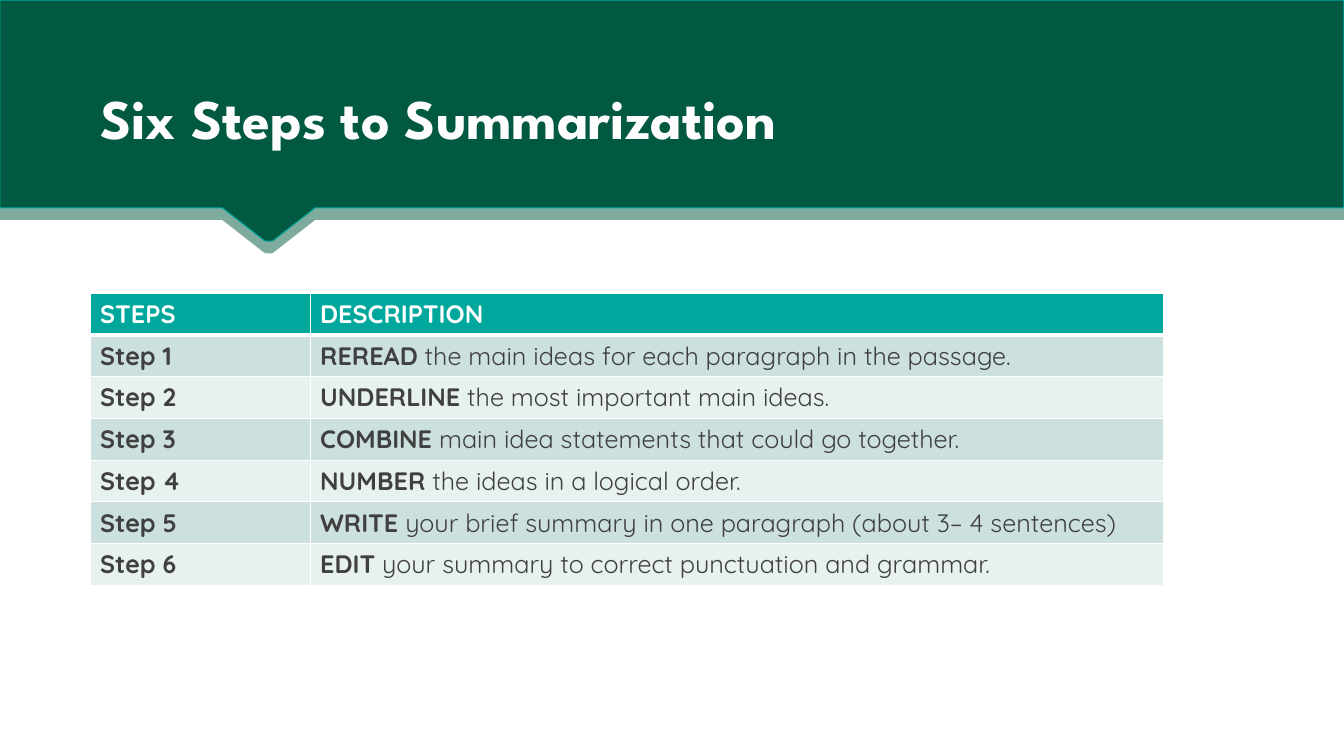
from pptx import Presentation
from pptx.dml.color import RGBColor
from pptx.enum.text import MSO_ANCHOR, MSO_AUTO_SIZE, PP_ALIGN
from pptx.oxml import parse_xml
from pptx.oxml.ns import nsdecls, qn
from pptx.util import Inches, Pt
from lxml.etree import SubElement

WHITE = RGBColor(0xFF, 0xFF, 0xFF)
TITLE_WHITE = RGBColor(0xFE, 0xFE, 0xFE)
DARK_GREEN = RGBColor(0x00, 0x59, 0x40)
TEAL = RGBColor(0x00, 0xA7, 0x9D)
ROW_TINTS = RGBColor(0xCC, 0xE1, 0xDF), RGBColor(0xE7, 0xF1, 0xEF)
TEXT_GREY = RGBColor(0x41, 0x40, 0x41)

TITLE_FONT = "League Spartan"
BODY_FONT = "Quicksand"

SLIDE_W, SLIDE_H = Inches(13.33), Inches(7.5)

HEADINGS = "STEPS", "DESCRIPTION"
ACTIONS = [
    ("REREAD", " the main ideas for each paragraph in the passage."),
    ("UNDERLINE", " the most important main ideas."),
    ("COMBINE", " main idea statements that could go together."),
    ("NUMBER", " the ideas in a logical order."),
    ("WRITE", " your brief summary in one paragraph (about 3– 4 sentences)"),
    ("EDIT", " your summary to correct punctuation and grammar."),
]

# Half of the pointer under the band, from its root to its tip:
# distance from the pointer's axis and drop below the band, in inches
POINTER = [(0.46, 0), (0.05, 0.32), (0.03, 0.33), (0, 0.33)]
POINTER_AXIS = 0.2  # share of the band's width


def style_run(run, **formats):
    color = formats.pop("color")
    for attribute, value in formats.items():
        setattr(run.font, attribute, value)
    run.font.color.rgb = color


def add_band(slide, left, top, width, height):
    """Draw a band with a rounded pointer on its lower edge."""
    bottom, axis = top + height, left + int(width * POINTER_AXIS)
    right_half = [(axis + Inches(x), bottom + Inches(y)) for x, y in POINTER]
    left_half = [(axis - Inches(x), bottom + Inches(y)) for x, y in POINTER[-2::-1]]
    builder = slide.shapes.build_freeform(left, top)
    builder.add_line_segments(
        [(left + width, top), (left + width, bottom), *right_half, *left_half, (left, bottom)]
    )
    band = builder.convert_to_shape()
    band.shadow.inherit = False
    band.fill.solid()
    band.fill.fore_color.rgb = DARK_GREEN
    return band


def add_header(slide, left, top, width, height):
    drop = int(SLIDE_H * 0.016)
    under_band = add_band(slide, left, top + drop, width, height)
    under_band.line.fill.background()
    tint = under_band.element.spPr.find(qn("a:solidFill"))[0]
    SubElement(tint, qn("a:alpha"), val="50000")

    main_band = add_band(slide, left, top, width, height)
    main_band.line.color.rgb = TEAL
    main_band.line.width = Pt(0.75)


def place_title(slide, text, left, top, width, height):
    title = slide.shapes.title
    box = {"left": left, "top": top, "width": width, "height": height}
    for attribute, value in box.items():
        setattr(title, attribute, value)
    title.element.getparent().append(title.element)  # in front of the bands

    frame = title.text_frame
    frame.auto_size = MSO_AUTO_SIZE.NONE
    frame.word_wrap = True
    frame.vertical_anchor = MSO_ANCHOR.BOTTOM
    line = frame.paragraphs[0]
    line.alignment = PP_ALIGN.LEFT
    run = line.add_run()
    run.text = text
    style_run(run, name=TITLE_FONT, size=Pt(40), bold=True, color=TITLE_WHITE)
    run.font.fill  # the shadow follows the fill in the run's properties
    run.font.color.rgb = TITLE_WHITE
    letter_shadow = parse_xml(
        f'<a:effectLst {nsdecls("a")}><a:outerShdw blurRad="38100" dist="38100" dir="2700000">'
        '<a:srgbClr val="000000"><a:alpha val="43000"/></a:srgbClr>'
        "</a:outerShdw></a:effectLst>"
    )
    run.font.fill
    run.element.rPr.find(qn("a:solidFill")).addnext(letter_shadow) if hasattr(
        run, "element"
    ) else title.element.find(".//" + qn("a:rPr")).find(qn("a:solidFill")).addnext(letter_shadow)


def set_borders(cell, widths):
    """Give the cell white borders, with widths in points by side."""
    properties = cell._tc.get_or_add_tcPr()
    for position, (side, width) in enumerate(widths.items()):
        border = parse_xml(
            f'<a:ln{side} {nsdecls("a")} w="{Pt(width)}"><a:solidFill>'
            f'<a:srgbClr val="{WHITE}"/></a:solidFill></a:ln{side}>'
        )
        properties.insert(position, border)


def fill_cell(cell, parts, fill, color, widths):
    """Write (text, bold) parts in a cell and paint it."""
    cell.fill.solid()
    cell.fill.fore_color.rgb = fill
    set_borders(cell, widths)
    for text, bold in parts:
        run = cell.text_frame.paragraphs[0].add_run()
        run.text = text
        style_run(run, name=BODY_FONT, size=Pt(18), bold=bold, color=color)


def add_steps_table(slide, left, top, width, height):
    row_count = len(ACTIONS) + 1
    steps = slide.shapes.add_table(row_count, 2, left, top, width, height).table
    steps.columns[0].width = int(width * 0.205)
    steps.columns[1].width = width - steps.columns[0].width

    for column, heading in enumerate(HEADINGS):
        fill_cell(steps.cell(0, column), [(heading, True)], TEAL, WHITE,
                  {"L": 1, "R": 1, "T": 1, "B": 3})
    for number, (action, detail) in enumerate(ACTIONS, 1):
        tint = ROW_TINTS[(number - 1) % 2]
        widths = {"L": 1, "R": 1, "T": 3 if number == 1 else 1, "B": 1}
        contents = [(f"Step {number}", True)], [(action, True), (detail, False)]
        for column, parts in enumerate(contents):
            fill_cell(steps.cell(number, column), parts, tint, TEXT_GREY, widths)


def main():
    deck = Presentation()
    deck.slide_width, deck.slide_height = SLIDE_W, SLIDE_H
    slide = deck.slides.add_slide(deck.slide_layouts[5])

    def box(left, top, width, height):
        """Turn shares of the slide's size into lengths."""
        return (int(SLIDE_W * left), int(SLIDE_H * top),
                int(SLIDE_W * width), int(SLIDE_H * height))

    add_header(slide, *box(0, 0, 1, 0.275))
    place_title(slide, "Six Steps to Summarization", *box(0.067, 0.065, 0.867, 0.141))
    add_steps_table(slide, *box(0.067, 0.388, 0.799, 0.383))
    deck.save("out.pptx")


if __name__ == "__main__":
    main()
